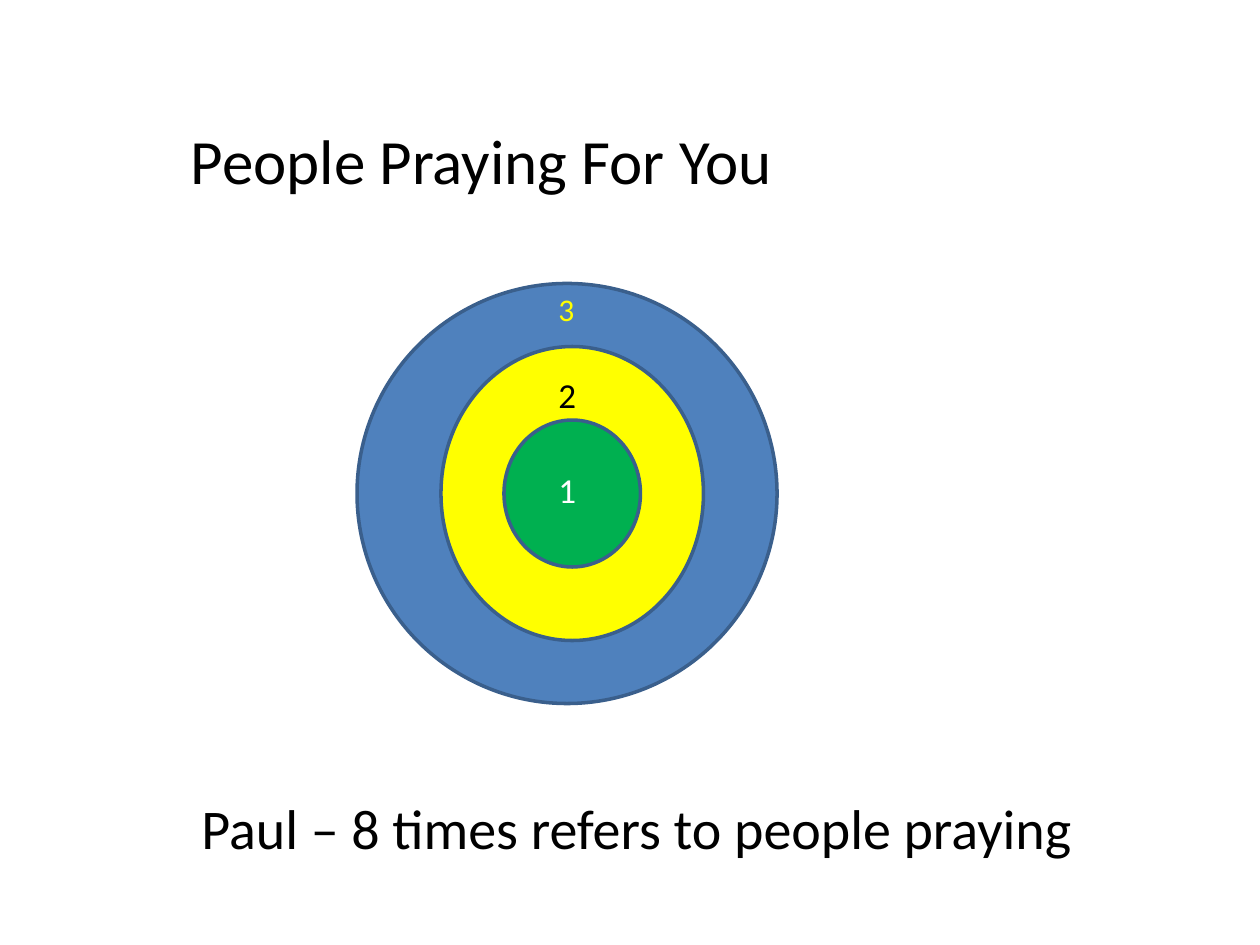
from pptx import Presentation
from pptx.dml.color import RGBColor as RGB
from pptx.enum.shapes import MSO_SHAPE as Shape
from pptx.enum.text import MSO_AUTO_SIZE as Fit
from pptx.util import Pt

FONT = "Calibri"
HUES = {
    "black": "000000",
    "white": "FFFFFF",
    "blue": "4F81BD",
    "yellow": "FFFF00",
    "green": "00B050",
    "edge": "3A5F8C",
}


def hue(name):
    return RGB.from_string(HUES[name])


def add_ring(slide, box, fill):
    ring = slide.shapes.add_shape(Shape.OVAL, *map(Pt, box))
    ring.shadow.inherit = False
    ring.fill.solid()
    ring.fill.fore_color.rgb = hue(fill)
    ring.line.color.rgb = hue("edge")
    ring.line.width = Pt(2)


def add_label(slide, text, box, size, color):
    frame = slide.shapes.add_textbox(*map(Pt, box)).text_frame
    frame.word_wrap = False
    frame.auto_size = Fit.SHAPE_TO_FIT_TEXT
    frame.text = text
    font = frame.paragraphs[0].runs[0].font
    font.name = FONT
    font.size = Pt(size)
    font.color.rgb = hue(color)


def main():
    deck = Presentation()
    deck.slide_width, deck.slide_height = Pt(720), Pt(540)
    slide = deck.slides.add_slide(deck.slide_layouts[6])

    # Title
    add_label(slide, "People Praying For You", (102, 66, 349, 51), 36, "black")

    # Rings, outermost first
    add_ring(slide, (204, 162, 240, 240), "blue")
    add_ring(slide, (252, 198, 150, 168), "yellow")
    add_ring(slide, (288, 240, 78, 84), "green")

    # Ring numbers, in one column
    for text, top, size, color in (
        ("1", 264, 20, "white"),
        ("2", 210, 20, "black"),
        ("3", 162, 18, "yellow"),
    ):
        add_label(slide, text, (312, top, 24, 1.6 * size), size, color)

    # Closing line
    add_label(slide, "Paul – 8 times refers to people praying",
              (108, 450, 517, 46), 32, "black")

    deck.save("out.pptx")


if __name__ == "__main__":
    main()
